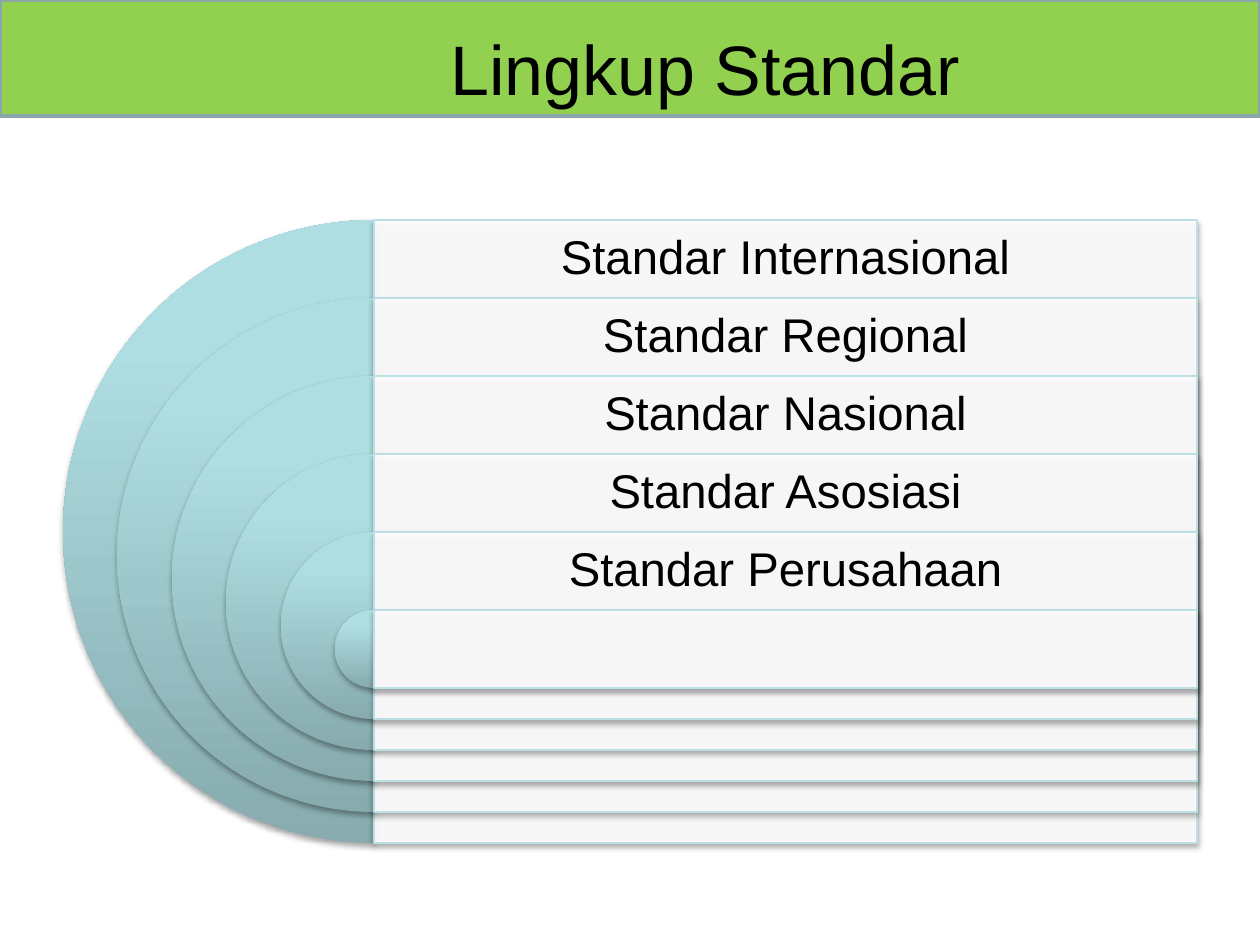
"""Build the "Lingkup Standar" slide: nested half discs with stacked bands."""
from dataclasses import dataclass

from lxml.etree import SubElement
from pptx import Presentation
from pptx.dml.color import RGBColor
from pptx.enum.shapes import MSO_SHAPE as SHAPE
from pptx.enum.text import MSO_ANCHOR as ANCHOR, PP_ALIGN as ALIGN
from pptx.oxml.ns import qn
from pptx.shapes.autoshape import Shape
from pptx.util import Emu, Pt

EMU_PER_PX = 914400 / 126
BLACK = RGBColor(0x00, 0x00, 0x00)
WHITE = RGBColor(0xFF, 0xFF, 0xFF)
GREEN = RGBColor(0x92, 0xD0, 0x50)
GREY_TEAL = RGBColor(0x8A, 0xA6, 0xA8)
PALE_TEAL = RGBColor(0xBB, 0xE0, 0xE3)
DISC_STOPS = (
    (0, RGBColor(0x87, 0xAB, 0xAE)),
    (80, RGBColor(0xAF, 0xDE, 0xE2)),
    (100, RGBColor(0xAF, 0xE0, 0xE4)),
)
LEVELS = (
    "Standar Internasional",
    "Standar Regional",
    "Standar Nasional",
    "Standar Asosiasi",
    "Standar Perusahaan",
    "",
)
TOP, CENTER_X, BAND_WIDTH = 220, 374, 823
ROW_HEIGHT, SIZE_STEP = 78, 109


@dataclass(frozen=True)
class Box:
    left: int
    top: int
    width: int
    height: int

    def emu(self) -> list[Emu]:
        return [px(v) for v in (self.left, self.top, self.width, self.height)]


@dataclass(frozen=True)
class Level:
    label: str
    top: int
    size: int


def px(value: int) -> Emu:
    return Emu(round(value * EMU_PER_PX))


def add_color(parent, color: RGBColor, alpha: int = 100) -> None:
    clr = SubElement(parent, qn("a:srgbClr"), val=str(color))
    if alpha < 100:
        SubElement(clr, qn("a:alpha"), val=str(alpha * 1000))


def add_shadow(sp: Shape) -> None:
    effects = sp._element.spPr.find(qn("a:effectLst"))
    shadow = SubElement(effects, qn("a:outerShdw"), blurRad=str(Pt(3.1)),
                        dist=str(Pt(1.8)), dir="5400000", rotWithShape="0")
    add_color(shadow, BLACK, 35)


def add_rect(shapes, box: Box, fill: RGBColor, line: RGBColor, width: float) -> Shape:
    sp = shapes.add_shape(SHAPE.RECTANGLE, *box.emu())
    sp.shadow.inherit = False
    sp.fill.solid()
    sp.fill.fore_color.rgb = fill
    sp.line.color.rgb = line
    sp.line.width = Pt(width)
    return sp


def add_text(shapes, box: Box, text: str, size: int, frame: dict, para: dict) -> None:
    tf = shapes.add_textbox(*box.emu()).text_frame
    p = tf.paragraphs[0]
    r = p.add_run()
    r.text = text
    r.font.color.rgb = BLACK
    formats = (
        (tf, {"word_wrap": True, "vertical_anchor": ANCHOR.MIDDLE, **frame}),
        (p, {"alignment": ALIGN.CENTER, **para}),
        (r.font, {"name": "Arial", "size": Pt(size)}),
    )
    for target, values in formats:
        for name, value in values.items():
            setattr(target, name, value)


def add_half_disc(shapes, level: Level) -> None:
    box = Box(CENTER_X - level.size // 2, level.top, level.size, level.size)
    sp = shapes.add_shape(SHAPE.PIE, *box.emu())
    sp.adjustments[0], sp.adjustments[1] = 54, 162
    sp.shadow.inherit = False
    sp.line.fill.background()
    sp.fill.gradient()
    sp.fill.gradient_angle = 90
    stops = sp._element.spPr.find(qn("a:gradFill")).find(qn("a:gsLst"))
    for stop in list(stops):
        stops.remove(stop)
    for pos, color in DISC_STOPS:
        add_color(SubElement(stops, qn("a:gs"), pos=str(pos * 1000)), color)
    add_shadow(sp)


def add_level(shapes, level: Level) -> None:
    add_half_disc(shapes, level)
    band = add_rect(shapes, Box(CENTER_X, level.top, BAND_WIDTH, level.size),
                    WHITE, PALE_TEAL, 0.75)
    fill = band._element.spPr.find(qn("a:solidFill"))
    SubElement(fill[0], qn("a:alpha"), val="90000")
    add_shadow(band)
    if level.label:
        sides = ("left", "top", "right", "bottom")
        add_text(shapes, Box(CENTER_X, level.top, BAND_WIDTH, ROW_HEIGHT), level.label, 27,
                 {f"margin_{side}": px(14) for side in sides}, {"line_spacing": 0.9})


def main() -> None:
    prs = Presentation()
    prs.slide_width, prs.slide_height = px(1260), px(945)
    s = prs.slides.add_slide(prs.slide_layouts[6])
    add_rect(s.shapes, Box(0, 0, 1260, 116), GREEN, GREY_TEAL, 2)
    add_text(s.shapes, Box(213, 10, 984, 116), "Lingkup Standar", 40, {}, {})
    diagram = s.shapes.add_group_shape().shapes
    for i, label in enumerate(LEVELS):
        size = ROW_HEIGHT + SIZE_STEP * (len(LEVELS) - 1 - i)
        add_level(diagram, Level(label, TOP + ROW_HEIGHT * i, size))
    prs.save("out.pptx")


if __name__ == "__main__":
    main()
